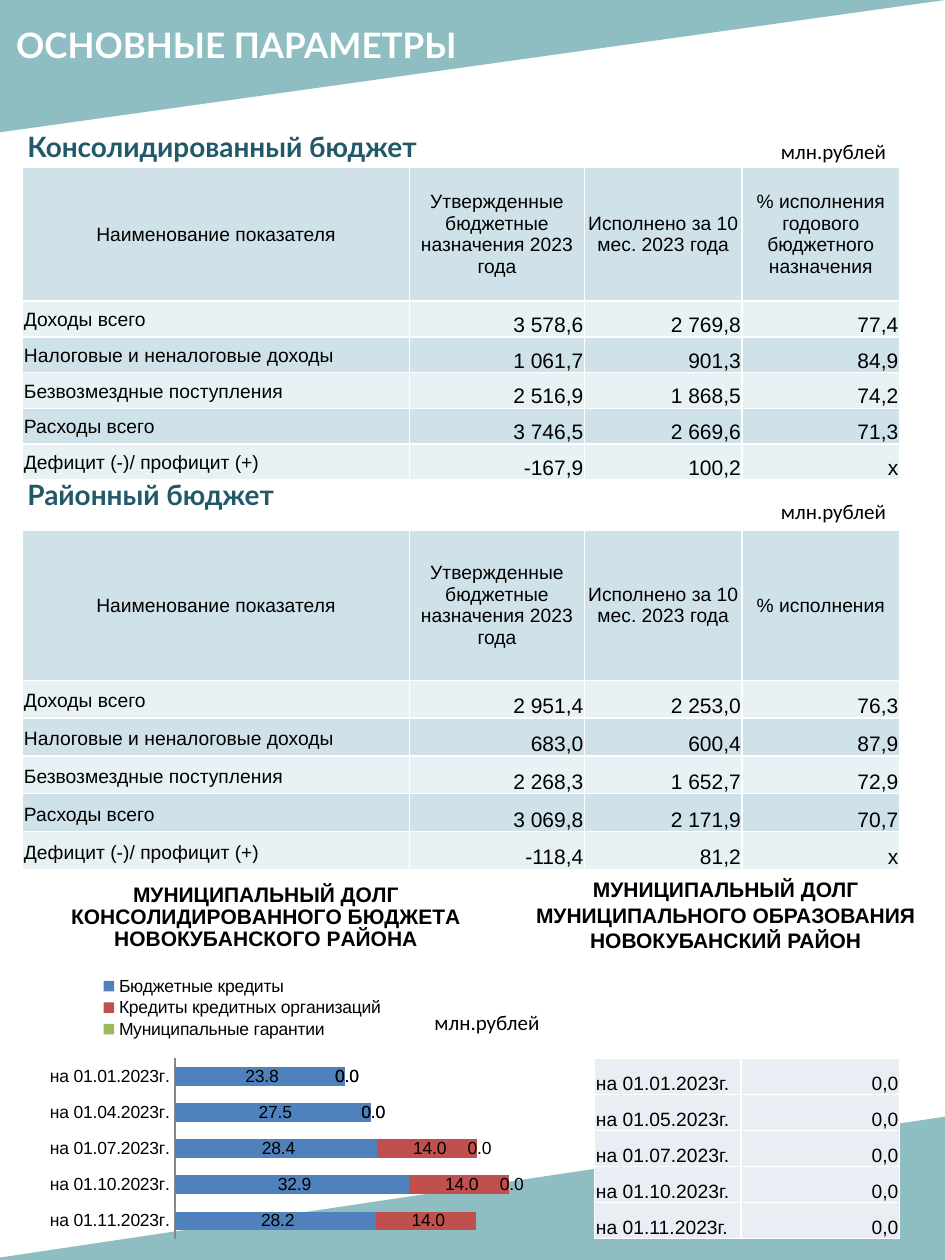
from dataclasses import dataclass

from lxml.etree import SubElement
from pptx import Presentation
from pptx.chart.data import CategoryChartData
from pptx.dml.color import RGBColor
from pptx.enum.chart import XL_CHART_TYPE as ChartType
from pptx.enum.chart import XL_LEGEND_POSITION as LegendPosition
from pptx.enum.chart import XL_TICK_MARK as TickMark
from pptx.enum.shapes import MSO_SHAPE as Shape
from pptx.enum.text import MSO_ANCHOR as Anchor
from pptx.enum.text import MSO_AUTO_SIZE as AutoSize
from pptx.enum.text import PP_ALIGN as Align
from pptx.oxml import parse_xml
from pptx.oxml.ns import nsdecls, qn
from pptx.util import Inches, Pt

COLORS = {
    "teal": "519AA0", "heading": "215968", "white": "FFFFFF", "black": "000000",
    "dark band": "CFE2EA", "light band": "E8F1F4", "debt cell": "E9EDF4",
    "loans": "4F81BD", "bank loans": "C0504D", "guarantees": "9BBB59",
    "axis": "878787",
}


@dataclass
class Label:
    text: str
    left: float
    top: float
    width: float
    height: float
    size: float
    font: str = "Lato"
    color: str = "heading"
    bold: bool = True
    wrap: bool = True
    align: Align = Align.LEFT


@dataclass
class Budget:
    top: float
    header_height: float
    row_height: float
    percent_heading: str
    figures: list[tuple[str, str, str]]


@dataclass
class Cell:
    text: str
    size: float
    fill: str
    align: Align = Align.LEFT
    anchor: Anchor = Anchor.BOTTOM
    top_inset: float = 0.05
    bottom_inset: float = 0.05


def unit(left: float, top: float) -> Label:
    return Label("млн.рублей", left, top, 1.06, 0.3, 12, "Calibri", "black", False, False)


LABELS = [
    Label("ОСНОВНЫЕ ПАРАМЕТРЫ", 0.03, 0.14, 4.87, 0.43, 20, color="white"),
    Label("Консолидированный бюджет", 0.12, 0.98, 4.87, 0.36, 16),
    Label("Районный бюджет", 0.12, 3.74, 4.87, 0.36, 16),
    unit(6.1, 1.05), unit(6.1, 3.91), unit(3.35, 7.96),
    Label("МУНИЦИПАЛЬНЫЙ ДОЛГ МУНИЦИПАЛЬНОГО ОБРАЗОВАНИЯ НОВОКУБАНСКИЙ РАЙОН",
          3.9, 6.91, 3.72, 0.91, 12, "Arial", "black", align=Align.CENTER),
]
HEADINGS = ["Наименование показателя", "Утвержденные бюджетные назначения 2023 года",
            "Исполнено за 10 мес. 2023 года"]
INDICATORS = ["Доходы всего", "Налоговые и неналоговые доходы", "Безвозмездные поступления",
              "Расходы всего", "Дефицит (-)/ профицит (+)"]
BUDGETS = [
    Budget(1.33, 1.06, 0.28, "% исполнения годового бюджетного назначения", [
        ("3 578,6", "2 769,8", "77,4"), ("1 061,7", "901,3", "84,9"),
        ("2 516,9", "1 868,5", "74,2"), ("3 746,5", "2 669,6", "71,3"),
        ("-167,9", "100,2", "х")]),
    Budget(4.21, 1.19, 0.3, "% исполнения", [
        ("2 951,4", "2 253,0", "76,3"), ("683,0", "600,4", "87,9"),
        ("2 268,3", "1 652,7", "72,9"), ("3 069,8", "2 171,9", "70,7"),
        ("-118,4", "81,2", "х")]),
]
DEBT_MONTHS = ["01", "05", "07", "10", "11"]
CHART_MONTHS = ["01", "04", "07", "10", "11"]
CHART_TITLE = ["МУНИЦИПАЛЬНЫЙ ДОЛГ", "КОНСОЛИДИРОВАННОГО БЮДЖЕТА", "НОВОКУБАНСКОГО РАЙОНА"]
DEBTS = [
    ("Бюджетные кредиты", "loans", [23.8, 27.5, 28.4, 32.9, 28.2]),
    ("Кредиты кредитных организаций", "bank loans", [0, 0, 14, 14, 14]),
    ("Муниципальные гарантии", "guarantees", [0, 0, 0, 0, None]),
]
NUMBER_FORMAT = "#\\ ##0.0"


def rgb(name: str) -> RGBColor:
    return RGBColor.from_string(COLORS[name])


def date_label(month: str) -> str:
    return f"на 01.{month}.2023г."


def style_font(font, size: float, name: str = "Arial", color: str = "black", bold: bool = False) -> None:
    font.size, font.name, font.bold = Pt(size), name, bold
    font.color.rgb = rgb(color)


def add_triangle(slide, left: float, top: float, width: float, height: float, flip: str) -> None:
    triangle = slide.shapes.add_shape(
        Shape.RIGHT_TRIANGLE, Inches(left), Inches(top), Inches(width), Inches(height))
    triangle.shadow.inherit = False
    triangle.rotation = 180
    triangle.fill.solid()
    triangle.fill.fore_color.rgb = rgb("teal")
    triangle.line.fill.background()
    properties = triangle._element.spPr
    properties.find(qn("a:xfrm")).set(flip, "1")
    tint = properties.find(qn("a:solidFill")).find(qn("a:srgbClr"))
    SubElement(tint, qn("a:alpha"), val="64000")


def add_label(slide, label: Label) -> None:
    frame = slide.shapes.add_textbox(
        Inches(label.left), Inches(label.top), Inches(label.width), Inches(label.height)).text_frame
    frame.word_wrap = label.wrap
    frame.auto_size = AutoSize.SHAPE_TO_FIT_TEXT
    paragraph = frame.paragraphs[0]
    paragraph.alignment = label.align
    run = paragraph.add_run()
    run.text = label.text
    style_font(run.font, label.size, label.font, label.color, label.bold)


def fill_cell(cell, content: Cell) -> None:
    cell.margin_left = cell.margin_right = Inches(0.01)
    cell.margin_top, cell.margin_bottom = Inches(content.top_inset), Inches(content.bottom_inset)
    cell.vertical_anchor = content.anchor
    cell.fill.solid()
    cell.fill.fore_color.rgb = rgb(content.fill)
    paragraph = cell.text_frame.paragraphs[0]
    paragraph.alignment = content.align
    run = paragraph.add_run()
    run.text = content.text
    style_font(run.font, content.size)
    for order, side in enumerate("LRTB"):
        cell._tc.tcPr.insert(order, parse_xml(
            f'<a:ln{side} {nsdecls("a")} w="12700"><a:solidFill>'
            f'<a:srgbClr val="{COLORS["white"]}"/></a:solidFill></a:ln{side}>'))


def add_grid(slide, left: float, top: float, widths: list[float], heights: list[float],
             rows: list[list[Cell]]) -> None:
    table = slide.shapes.add_table(
        len(heights), len(widths), Inches(left), Inches(top),
        Inches(sum(widths)), Inches(sum(heights))).table
    table.first_row = table.horz_banding = False
    for column, width in zip(table.columns, widths):
        column.width = Inches(width)
    for row, height, contents in zip(table.rows, heights, rows):
        row.height = Inches(height)
        for cell, content in zip(row.cells, contents):
            fill_cell(cell, content)


def add_budget(slide, budget: Budget) -> None:
    rows = [[Cell(heading, 11, "dark band", Align.CENTER, Anchor.MIDDLE)
             for heading in [*HEADINGS, budget.percent_heading]]]
    for index, (indicator, figures) in enumerate(zip(INDICATORS, budget.figures)):
        band = "dark band" if index % 2 else "light band"
        rows.append([Cell(indicator, 11, band)] + [
            Cell(figure, 12, band, Align.RIGHT, top_inset=0.01, bottom_inset=0) for figure in figures])
    heights = [budget.header_height] + [budget.row_height] * len(INDICATORS)
    add_grid(slide, 0.18, budget.top, [3.07, 1.39, 1.25, 1.25], heights, rows)


def place(part, **fractions: float) -> None:
    """Give a chart part a manual layout in fractions of the chart."""
    for old in part.findall(qn("c:layout")):
        part.remove(old)
    target = '<c:layoutTarget val="inner"/>' if part.tag == qn("c:plotArea") else ""
    modes = "".join(f'<c:{axis}Mode val="edge"/>' for axis in "xy")
    values = "".join(f'<c:{key} val="{value}"/>' for key, value in fractions.items())
    layout = parse_xml(f'<c:layout {nsdecls("c")}><c:manualLayout>{target}{modes}{values}'
                       '</c:manualLayout></c:layout>')
    overlay = part.find(qn("c:overlay"))
    part.insert(0 if overlay is None else part.index(overlay), layout)


def add_debt_chart(slide) -> None:
    data = CategoryChartData(number_format=NUMBER_FORMAT)
    data.categories = [date_label(month) for month in CHART_MONTHS]
    for name, _, values in DEBTS:
        data.add_series(name, values)
    chart = slide.shapes.add_chart(
        ChartType.BAR_STACKED, Inches(0), Inches(6.51), Inches(5.34), Inches(3.5), data).chart
    style_font(chart.font, 10)

    chart.has_title = True
    title = chart.chart_title
    title.include_in_layout = False
    for index, line in enumerate(CHART_TITLE):
        frame = title.text_frame
        paragraph = frame.add_paragraph() if index else frame.paragraphs[0]
        run = paragraph.add_run()
        run.text = line
        style_font(run.font, 12, bold=True)

    chart.has_legend = True
    chart.legend.position = LegendPosition.TOP
    chart.legend.include_in_layout = False
    place(title._element, x=0.1, y=0.13)
    place(chart.legend._element, x=0.08, y=0.35, w=0.56, h=0.15)
    place(chart._chartSpace.chart.plotArea, x=0.26, y=0.54, w=0.53, h=0.41)

    dates, amounts = chart.category_axis, chart.value_axis
    dates.reverse_order = True
    dates.major_tick_mark = TickMark.NONE
    dates.format.line.color.rgb = rgb("axis")
    dates.format.line.width = Pt(0.75)
    amounts.visible = amounts.has_major_gridlines = False
    amounts.minimum_scale, amounts.maximum_scale = 0, 50

    plot = chart.plots[0]
    plot.gap_width, plot.overlap, plot.vary_by_categories = 95, 100, False
    for series, (_, color, _) in zip(plot.series, DEBTS):
        series.format.fill.solid()
        series.format.fill.fore_color.rgb = rgb(color)
        labels = series.data_labels
        labels.show_value = True
        labels.number_format, labels.number_format_is_linked = NUMBER_FORMAT, False
        style_font(labels.font, 10)


def main() -> None:
    deck = Presentation()
    deck.slide_width, deck.slide_height = Inches(7.5), Inches(10)
    slide = deck.slides.add_slide(deck.slide_layouts[6])
    add_triangle(slide, 0, 0, 7.5, 1.05, "flipH")
    add_triangle(slide, -0.13, 8.86, 7.65, 1.14, "flipV")
    for label in LABELS:
        add_label(slide, label)
    for budget in BUDGETS:
        add_budget(slide, budget)
    debts = [[Cell(text, 11, "debt cell", align, top_inset=0.01, bottom_inset=0)
              for text, align in ((date_label(month), Align.LEFT), ("0,0", Align.RIGHT))]
             for month in DEBT_MONTHS]
    add_grid(slide, 4.72, 8.4, [1.16, 1.26], [1.43 / len(debts)] * len(debts), debts)
    add_debt_chart(slide)
    deck.save("out.pptx")


if __name__ == "__main__":
    main()
